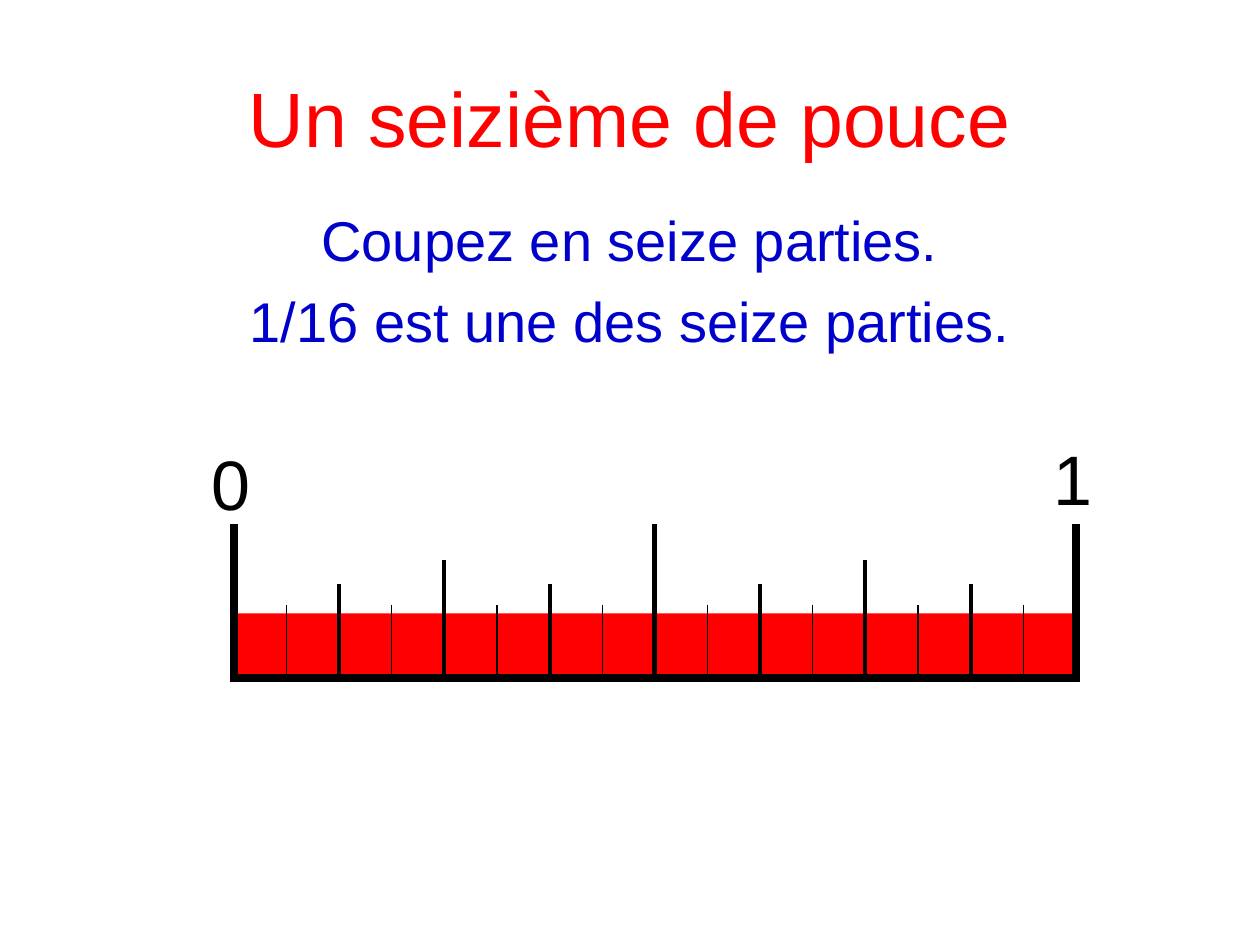
import dataclasses

import pptx
import pptx.dml.color
import pptx.enum.shapes
import pptx.enum.text
import pptx.oxml.ns
import pptx.presentation
import pptx.slide
import pptx.util
import lxml.etree

RED = pptx.dml.color.RGBColor(0xFF, 0x00, 0x00)
BLUE = pptx.dml.color.RGBColor(0x00, 0x00, 0xCC)
BLACK = pptx.dml.color.RGBColor(0x00, 0x00, 0x00)

SLIDE_WIDTH = pptx.util.Inches(10)
SLIDE_HEIGHT = pptx.util.Inches(7.5)

PARTS = 16
RULER_LEFT, RULER_RIGHT = 0.1855, 0.854
RULER_LEFT, RULER_RIGHT = 18.55, 85.4
BAND_TOP, BASELINE = 64.9, 71.73
EDGE_TOP, EDGE_BOTTOM, EDGE_WEIGHT = 55.47, 72.13, 4.5


@dataclasses.dataclass(frozen=True)
class Label:
    lines: tuple[str, ...]
    left: float
    top: float
    width: float
    height: float
    size: int
    color: pptx.dml.color.RGBColor
    alignment: pptx.enum.text.PP_ALIGN
    anchor: pptx.enum.text.MSO_ANCHOR = pptx.enum.text.MSO_ANCHOR.TOP


@dataclasses.dataclass(frozen=True)
class TickLevel:
    divisions: int
    top: float
    weight: float


CENTER = pptx.enum.text.PP_ALIGN.CENTER
LEFT = pptx.enum.text.PP_ALIGN.LEFT
MIDDLE = pptx.enum.text.MSO_ANCHOR.MIDDLE

LABELS = (
    Label(("Un seizième de pouce",), 5, 4, 90, 16.67, 44, RED, CENTER, MIDDLE),
    Label(("Coupez en seize parties.", "1/16 est une des seize parties."),
          5, 21.07, 90, 27.73, 32, BLUE, CENTER),
    Label(("0",), 15.8, 46, 10, 10.27, 40, BLACK, LEFT),
    Label(("1",), 82.6, 45.47, 8.3, 10.27, 40, BLACK, LEFT),
)

TICK_LEVELS = (
    TickLevel(2, EDGE_TOP, 3),
    TickLevel(4, 59.3, 2.25),
    TickLevel(8, 61.8, 2.25),
    TickLevel(16, 64, 0.75),
)


def across(percent: float) -> pptx.util.Emu:
    return pptx.util.Emu(round(SLIDE_WIDTH * percent / 100))


def down(percent: float) -> pptx.util.Emu:
    return pptx.util.Emu(round(SLIDE_HEIGHT * percent / 100))


def ruler_column(index: float) -> float:
    return RULER_LEFT + (RULER_RIGHT - RULER_LEFT) * index / PARTS


def add_label(slide: pptx.slide.Slide, label: Label) -> None:
    shape = slide.shapes.add_textbox(across(label.left), down(label.top),
                                     across(label.width), down(label.height))
    frame = shape.text_frame
    frame.word_wrap = True
    frame.vertical_anchor = label.anchor
    frame.text = "\n".join(label.lines)
    for index, paragraph in enumerate(frame.paragraphs):
        paragraph.alignment = label.alignment
        paragraph.space_before = pptx.util.Pt(8 if index else 0)
        paragraph.font.name = "Arial"
        paragraph.font.size = pptx.util.Pt(label.size)
        paragraph.font.color.rgb = label.color


def add_part(slide: pptx.slide.Slide, index: int) -> None:
    left, right = across(ruler_column(index)), across(ruler_column(index + 1))
    shape = slide.shapes.add_shape(
        pptx.enum.shapes.MSO_SHAPE.RECTANGLE,
        left, down(BAND_TOP), right - left, down(BASELINE - BAND_TOP))
    shape.shadow.inherit = False
    shape.fill.solid()
    shape.fill.fore_color.rgb = RED
    shape.line.fill.background()


def add_line(slide: pptx.slide.Slide, start: tuple[float, float],
             end: tuple[float, float], weight: float) -> None:
    connector = slide.shapes.add_connector(
        pptx.enum.shapes.MSO_CONNECTOR.STRAIGHT,
        across(start[0]), down(start[1]), across(end[0]), down(end[1]))
    connector.line.color.rgb = BLACK
    connector.line.width = pptx.util.Pt(weight)
    properties = connector.element.find(pptx.oxml.ns.qn("p:spPr"))
    lxml.etree.SubElement(properties, pptx.oxml.ns.qn("a:effectLst"))


def add_ruler(slide: pptx.slide.Slide) -> None:
    for index in range(PARTS):
        add_part(slide, index)
    for level in TICK_LEVELS:
        step = PARTS // level.divisions
        for index in range(step, PARTS, 2 * step):
            column = ruler_column(index)
            add_line(slide, (column, level.top), (column, BASELINE), level.weight)
    add_line(slide, (RULER_LEFT, BASELINE), (RULER_RIGHT, BASELINE), EDGE_WEIGHT)
    for column in (RULER_LEFT, RULER_RIGHT):
        add_line(slide, (column, EDGE_TOP), (column, EDGE_BOTTOM), EDGE_WEIGHT)


def main() -> None:
    presentation = pptx.Presentation()
    presentation.slide_width = SLIDE_WIDTH
    presentation.slide_height = SLIDE_HEIGHT
    slide = presentation.slides.add_slide(presentation.slide_layouts[6])
    add_ruler(slide)
    for label in LABELS:
        add_label(slide, label)
    presentation.save("out.pptx")


if __name__ == "__main__":
    main()
